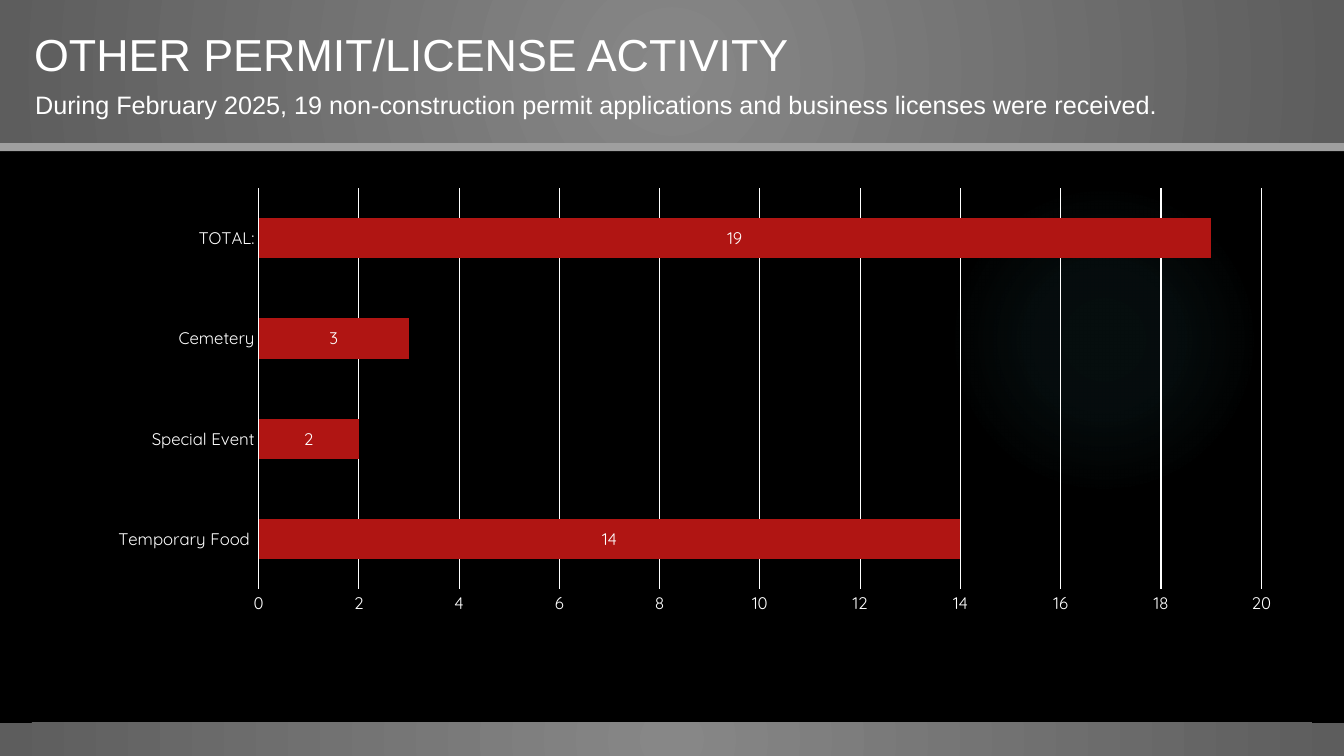
from pptx import Presentation
from pptx.chart.data import CategoryChartData
from pptx.dml.color import RGBColor
from pptx.enum.chart import XL_CHART_TYPE, XL_LABEL_POSITION, XL_TICK_MARK
from pptx.enum.shapes import MSO_SHAPE
from pptx.oxml import parse_xml
from pptx.oxml.ns import nsdecls, qn
from pptx.util import Inches, Pt

COLORS = {
    "background": "000000",
    "text": "FFFFFF",
    "bar": "B01513",
    "rule": "9F9F9F",
    "band_center": "878787",
    "band_edge": "5D5D5D",
    "glow": "50B9C1",
}
HEADING_FONT, CHART_FONT = "Arial", "Quicksand"
HEADINGS = [  # text, size, left, top, height
    ("OTHER PERMIT/LICENSE ACTIVITY", 32, 0.24, 0.22, 0.64),
    ("During February 2025, 19 non-construction permit applications "
     "and business licenses were received.", 18, 0.25, 0.84, 0.4),
]
PERMITS = [("Temporary Food ", 14), ("Special Event", 2), ("Cemetery", 3), ("TOTAL:", 19)]
PLOT_AREA = {"x": 0.185, "y": 0.045, "w": 0.765, "h": 0.729}

SLIDE_WIDTH, SLIDE_HEIGHT = 13.33, 7.5
HEADER_HEIGHT, RULE_HEIGHT, FOOTER_HEIGHT = 1.42, 0.08, 0.33

# Gradient stops: position in percent, colour, opacity in percent
GLOW = [(0, "glow", 7), (36, "glow", 6), (69, "glow", 0)]
BAND = [(0, "band_center", 100), (100, "band_edge", 100)]


def color(name):
    return RGBColor.from_string(COLORS[name])


def add_plain_shape(page, kind, left, top, width, height):
    shape = page.shapes.add_shape(
        kind, Inches(left), Inches(top), Inches(width), Inches(height))
    shape.shadow.inherit = False
    shape.line.fill.background()
    return shape


def fill_radial(shape, stops):
    """Fill the shape with a gradient that runs from its centre outwards."""
    stop_xml = "".join(
        f'<a:gs pos="{position * 1000}"><a:srgbClr val="{COLORS[name]}">'
        f'<a:alpha val="{opacity * 1000}"/></a:srgbClr></a:gs>'
        for position, name, opacity in stops)
    gradient = parse_xml(
        f'<a:gradFill {nsdecls("a")} rotWithShape="1"><a:gsLst>{stop_xml}</a:gsLst>'
        '<a:path path="circle"><a:fillToRect l="50000" t="50000" r="50000" b="50000"/>'
        '</a:path></a:gradFill>')
    shape.fill.background()
    properties = shape.element.spPr
    properties.replace(properties.find(qn("a:noFill")), gradient)


def style_font(font, name, size):
    font.name = name
    font.size = Pt(size)
    font.color.rgb = color("text")


def add_heading(page, text, size, left, top, height):
    box = page.shapes.add_textbox(Inches(left), Inches(top), Inches(12.84), Inches(height))
    box.text_frame.word_wrap = True
    box.text_frame.text = text
    style_font(box.text_frame.paragraphs[0].runs[0].font, HEADING_FONT, size)


def style_line(line):
    line.color.rgb = color("text")
    line.width = Pt(0.75)


def set_plot_area(chart):
    """Pin the inner plot area to fixed fractions of the chart."""
    places = "".join(f'<c:{key}Mode val="edge"/>' for key in "xy")
    places += "".join(f'<c:{key} val="{value}"/>' for key, value in PLOT_AREA.items())
    layout = parse_xml(
        f'<c:layout {nsdecls("c")}><c:manualLayout><c:layoutTarget val="inner"/>'
        f'{places}</c:manualLayout></c:layout>')
    area = chart.element.find(".//" + qn("c:plotArea"))
    for old_layout in area.findall(qn("c:layout")):
        area.remove(old_layout)
    area.insert(0, layout)


def add_permit_chart(page):
    data = CategoryChartData()
    data.categories = [name for name, count in PERMITS]
    data.add_series("Series 1", [count for name, count in PERMITS])
    chart = page.shapes.add_chart(
        XL_CHART_TYPE.BAR_STACKED, Inches(0.16), Inches(1.62),
        Inches(13), Inches(5.46), data).chart
    chart.has_title = False
    chart.has_legend = False
    style_font(chart.font, CHART_FONT, 10)
    set_plot_area(chart)

    for axis in (chart.category_axis, chart.value_axis):
        axis.major_tick_mark = axis.minor_tick_mark = XL_TICK_MARK.NONE
        style_font(axis.tick_labels.font, CHART_FONT, 12)
    style_line(chart.category_axis.format.line)
    counts = chart.value_axis
    counts.minimum_scale, counts.maximum_scale, counts.major_unit = 0, 20, 2
    counts.format.line.fill.background()
    style_line(counts.major_gridlines.format.line)

    plot = chart.plots[0]
    plot.gap_width, plot.overlap = 150, 100
    plot.vary_by_categories = False
    bars = plot.series[0]
    bars.format.fill.solid()
    bars.format.fill.fore_color.rgb = color("bar")
    labels = bars.data_labels
    labels.show_value = True
    labels.position = XL_LABEL_POSITION.CENTER
    style_font(labels.font, CHART_FONT, 12)


def main():
    deck = Presentation()
    deck.slide_width, deck.slide_height = Inches(SLIDE_WIDTH), Inches(SLIDE_HEIGHT)
    page = deck.slides.add_slide(deck.slide_layouts[6])
    page.background.fill.solid()
    page.background.fill.fore_color.rgb = color("background")

    glow = add_plain_shape(page, MSO_SHAPE.OVAL, 9.41, 1.83, 3.08, 3.08)
    fill_radial(glow, GLOW)
    for top, height in ((0, HEADER_HEIGHT), (SLIDE_HEIGHT - FOOTER_HEIGHT, FOOTER_HEIGHT)):
        band = add_plain_shape(page, MSO_SHAPE.RECTANGLE, 0, top, SLIDE_WIDTH, height)
        fill_radial(band, BAND)
    rule = add_plain_shape(
        page, MSO_SHAPE.RECTANGLE, 0, HEADER_HEIGHT, SLIDE_WIDTH, RULE_HEIGHT)
    rule.fill.solid()
    rule.fill.fore_color.rgb = color("rule")

    for heading in HEADINGS:
        add_heading(page, *heading)
    add_permit_chart(page)
    deck.save("out.pptx")


if __name__ == "__main__":
    main()
